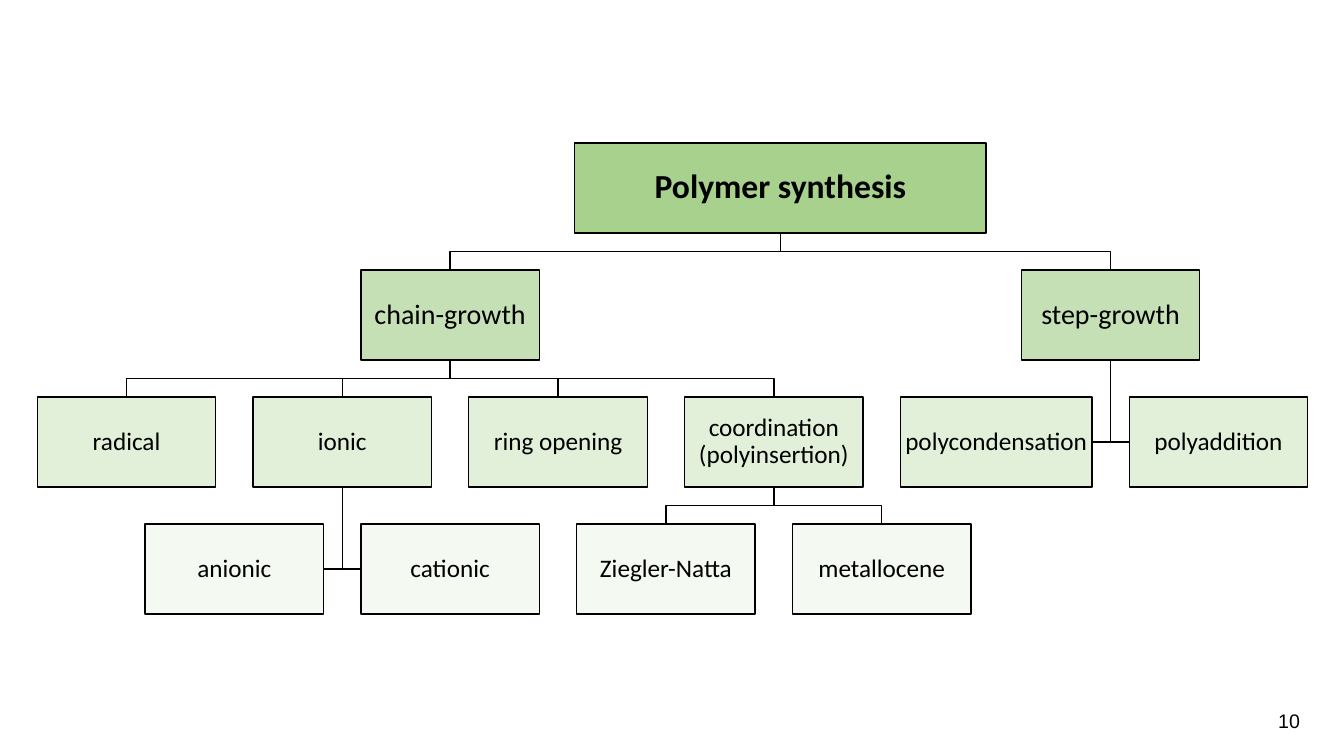
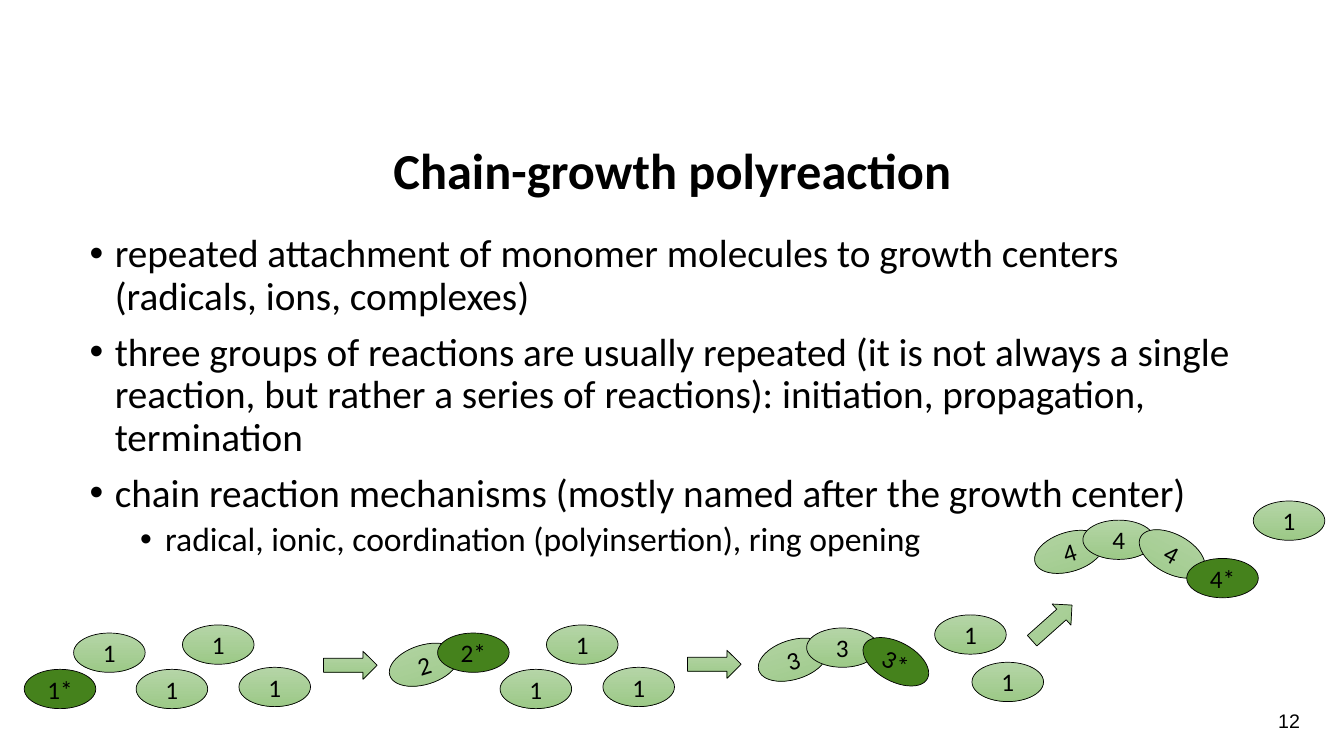
from dataclasses import dataclass

from lxml.etree import SubElement
from pptx import Presentation
from pptx.dml.color import RGBColor
from pptx.enum.shapes import MSO_SHAPE
from pptx.enum.text import MSO_ANCHOR, PP_ALIGN
from pptx.oxml.ns import qn
from pptx.util import Inches, Pt


@dataclass(frozen=True)
class Theme:
    ink: str = "000000"
    levels: tuple = ("A9D18E", "C5E0B4", "E2F0D9", "F4F9F1")
    level_sizes: tuple = (24, 20, 18, 18)
    monomer: tuple = ("B5D5A7", "9CC987")
    active_center: str = "45821C"
    font: str = "Calibri"
    number_font: str = "Arial"
    title_size: int = 36
    body_sizes: tuple = (28, 24)
    label_size: int = 18
    number_size: int = 14
    tight_spacing: float = 0.9
    tree_line: float = 1
    molecule_line: float = 0.5


THEME = Theme()

ROOT = "Polymer synthesis"
METHODS = {
    "chain-growth": ["radical", "ionic", "ring opening", "coordination\n(polyinsertion)"],
    "step-growth": ["polycondensation", "polyaddition"],
}
VARIANTS = {
    "ionic": ["anionic", "cationic"],
    "coordination\n(polyinsertion)": ["Ziegler-Natta", "metallocene"],
}
HANGING = ("step-growth", "ionic")
WIDE_BOXES = {ROOT: 4.08, "polycondensation": 1.9}
BOX_WIDTH, BOX_HEIGHT, BOX_GAP = 1.77, 0.89, 0.37
TREE_LEFT, TREE_TOP = 0.37, 1.42

TITLE = "Chain-growth polyreaction"
BULLETS = [
    (0, "repeated attachment of monomer molecules to growth centers (radicals, ions, complexes)"),
    (0, "three groups of reactions are usually repeated (it is not always a single reaction, "
        "but rather a series of reactions): initiation, propagation, termination"),
    (0, "chain reaction mechanisms (mostly named after the growth center)"),
    (1, "radical, ionic, coordination (polyinsertion), ring opening"),
]
BULLET_INDENTS = (0.25, 0.75)
BULLET_SPACING = (10, 5)

MOLECULE_SIZE = (0.71, 0.39)
ARROW_SIZE = (0.53, 0.28)
CHAIN_LINKS = [(0, 0.12, 342.7), (0.49, 0, 0), (1.02, 0.14, 28.3), (1.52, 0.38, 0)]
POOL = [(1.81, 6.2), (1.35, 6.64), (2.37, 6.62)]
POOL_SHIFT = 3.61
STAGES = [
    (1, (0.24, 6.52), [(0.73, 6.28)] + POOL),
    (2, (3.85, 6.28), [(left + POOL_SHIFT, top) for left, top in POOL]),
    (3, (7.51, 6.23), [(9.27, 6.1), (9.64, 6.57)]),
    (4, (10.25, 5.16), [(12.43, 4.97)]),
]
ARROWS = [(3.21, 6.46, 0), (6.82, 6.45, 0), (10.17, 6.04, 318.3)]


def color(value):
    return RGBColor.from_string(value)


def add_run(paragraph, text, size, bold=False, font=THEME.font):
    run = paragraph.add_run()
    run.text = text
    run.font.name = font
    run.font.size = Pt(size)
    run.font.bold = bold
    run.font.color.rgb = color(THEME.ink)


def add_label(shape, text, size, bold=False, font=THEME.font, wrap=True, spacing=1.0):
    frame = shape.text_frame
    frame.word_wrap = wrap
    frame.vertical_anchor = MSO_ANCHOR.MIDDLE
    frame.margin_left = frame.margin_right = frame.margin_top = frame.margin_bottom = Inches(0.01)
    paragraph = frame.paragraphs[0]
    paragraph.alignment = PP_ALIGN.CENTER
    paragraph.line_spacing = spacing
    for index, line in enumerate(text.split("\n")):
        if index:
            paragraph.add_line_break()
        add_run(paragraph, line, size, bold, font)


def add_text_box(slide, left, top, width, height):
    return slide.shapes.add_textbox(Inches(left), Inches(top), Inches(width), Inches(height))


def add_page_number(slide, number):
    box = add_text_box(slide, 12.51, 6.95, 0.55, 0.4)
    add_label(box, number, THEME.number_size, font=THEME.number_font)


def set_outline(shape, line_width):
    shape.shadow.inherit = False
    shape.line.color.rgb = color(THEME.ink)
    shape.line.width = Pt(line_width)


def add_figure(slide, kind, left, top, size, fill, line_width, rotation=0):
    shape = slide.shapes.add_shape(kind, Inches(left), Inches(top), *map(Inches, size))
    set_outline(shape, line_width)
    shape.rotation = rotation
    if isinstance(fill, tuple):
        shape.fill.gradient()
        shape.fill.gradient_angle = 270
        for stop, value in zip(shape.fill.gradient_stops, fill):
            stop.color.rgb = color(value)
    else:
        shape.fill.solid()
        shape.fill.fore_color.rgb = color(fill)
    return shape


def add_elbow(slide, points):
    start, *rest = [(Inches(x), Inches(y)) for x, y in points]
    builder = slide.shapes.build_freeform(*start)
    builder.add_line_segments(rest, close=False)
    elbow = builder.convert_to_shape()
    elbow.fill.background()
    set_outline(elbow, THEME.tree_line)


def box_width(name):
    return WIDE_BOXES.get(name, BOX_WIDTH)


def row_top(level):
    return TREE_TOP + level * (BOX_HEIGHT + BOX_GAP)


def place_tree():
    centers, levels = {}, {ROOT: 0}
    left = TREE_LEFT
    for growth, methods in METHODS.items():
        levels[growth] = 1
        first_left = left
        for method in methods:
            levels[method] = 2
            centers[method] = left + box_width(method) / 2
            left += box_width(method) + BOX_GAP
        if growth in HANGING:
            centers[growth] = first_left + box_width(methods[0]) + BOX_GAP / 2
        else:
            centers[growth] = (centers[methods[0]] + centers[methods[-1]]) / 2
    centers[ROOT] = sum(centers[growth] for growth in METHODS) / len(METHODS)
    for method, variants in VARIANTS.items():
        for index, variant in enumerate(variants):
            levels[variant] = 3
            offset = index - (len(variants) - 1) / 2
            centers[variant] = centers[method] + offset * (BOX_WIDTH + BOX_GAP)
    return centers, levels


def add_branch(slide, parent, children, centers, levels):
    middle = centers[parent]
    start = row_top(levels[parent]) + BOX_HEIGHT
    child_top = start + BOX_GAP
    for child in children:
        end = centers[child]
        if parent in HANGING:
            bar = child_top + BOX_HEIGHT / 2
            side = BOX_GAP / 2 if end > middle else -BOX_GAP / 2
            add_elbow(slide, [(middle, start), (middle, bar), (middle + side, bar)])
        else:
            bar = start + BOX_GAP / 2
            add_elbow(slide, [(middle, start), (middle, bar), (end, bar), (end, child_top)])


def build_tree_slide(slide):
    centers, levels = place_tree()
    for parent, children in {ROOT: list(METHODS), **METHODS, **VARIANTS}.items():
        add_branch(slide, parent, children, centers, levels)
    for name, level in levels.items():
        width = box_width(name)
        box = add_figure(slide, MSO_SHAPE.RECTANGLE, centers[name] - width / 2, row_top(level),
                         (width, BOX_HEIGHT), THEME.levels[level], THEME.tree_line)
        add_label(box, name, THEME.level_sizes[level], bold=level == 0,
                  spacing=THEME.tight_spacing)


def add_bullets(slide):
    frame = add_text_box(slide, 0.79, 2.27, 11.71, 4.88).text_frame
    frame.word_wrap = True
    for index, (level, text) in enumerate(BULLETS):
        paragraph = frame.add_paragraph() if index else frame.paragraphs[0]
        paragraph.level = level
        properties = paragraph._p.get_or_add_pPr()
        properties.set("marL", str(Inches(BULLET_INDENTS[level])))
        properties.set("indent", str(-Inches(0.25)))
        SubElement(properties, qn("a:buFont"), typeface="Arial")
        SubElement(properties, qn("a:buChar"), char="•")
        paragraph.line_spacing = THEME.tight_spacing
        if index:
            paragraph.space_before = Pt(BULLET_SPACING[level])
        add_run(paragraph, text, THEME.body_sizes[level])


def add_molecule(slide, label, left, top, rotation=0):
    fill = THEME.active_center if label.endswith("*") else THEME.monomer
    molecule = add_figure(slide, MSO_SHAPE.OVAL, left, top, MOLECULE_SIZE, fill,
                          THEME.molecule_line, rotation)
    add_label(molecule, label, THEME.label_size, wrap=False)


def build_chain_slide(slide):
    add_bullets(slide)
    add_label(add_text_box(slide, 0.92, 0.99, 11.5, 1.45), TITLE, THEME.title_size, bold=True,
              spacing=THEME.tight_spacing)
    for length, (left, top), monomers in STAGES:
        for position, (right, down, tilt) in enumerate(CHAIN_LINKS[:length], 1):
            label = f"{length}*" if position == length else str(length)
            add_molecule(slide, label, left + right, top + down, tilt if length > 1 else 0)
        for monomer in monomers:
            add_molecule(slide, "1", *monomer)
    for left, top, rotation in ARROWS:
        add_figure(slide, MSO_SHAPE.RIGHT_ARROW, left, top, ARROW_SIZE, THEME.monomer,
                   THEME.molecule_line, rotation)


def main():
    presentation = Presentation()
    presentation.slide_width = Inches(13.33)
    presentation.slide_height = Inches(7.5)
    for number, build in (("10", build_tree_slide), ("12", build_chain_slide)):
        slide = presentation.slides.add_slide(presentation.slide_layouts[6])
        build(slide)
        add_page_number(slide, number)
    presentation.save("out.pptx")


if __name__ == "__main__":
    main()
